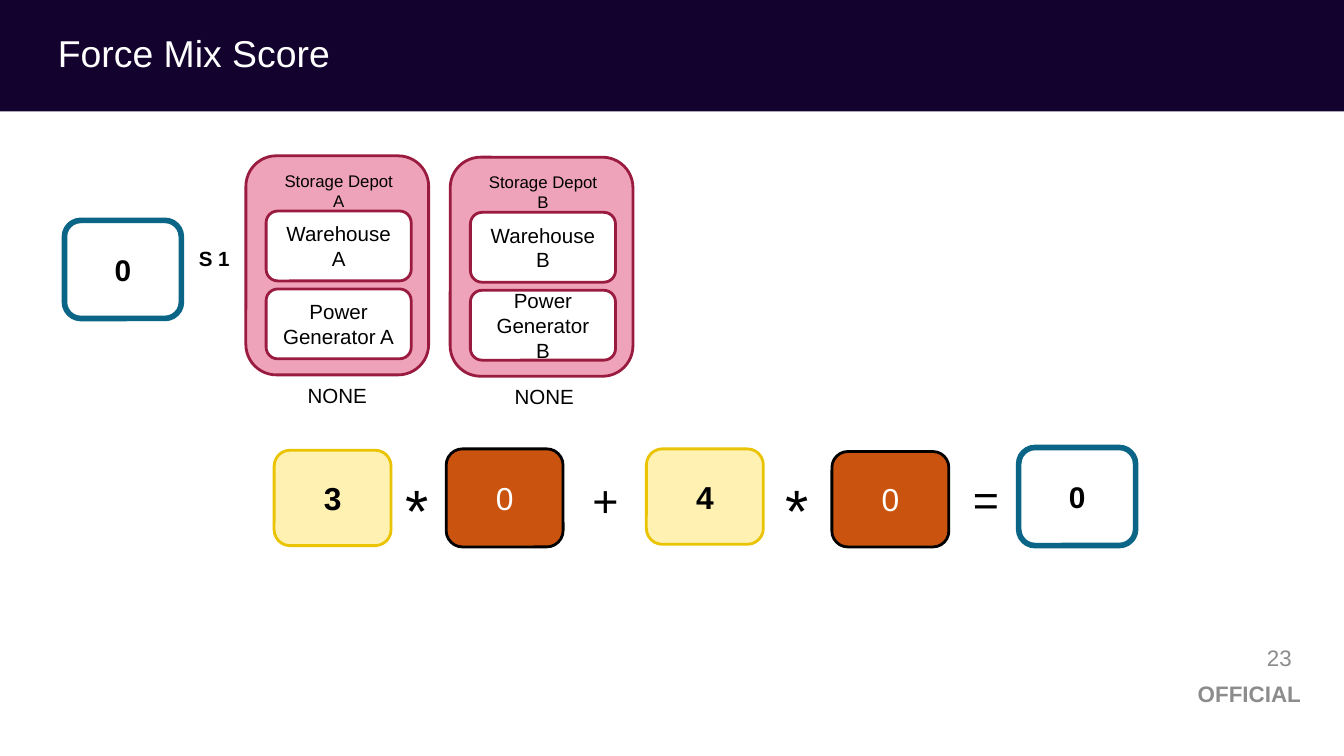
from pptx import Presentation
from pptx.dml.color import RGBColor
from pptx.enum.shapes import MSO_SHAPE
from pptx.enum.text import MSO_ANCHOR, PP_ALIGN
from pptx.util import Inches, Pt

NAVY = RGBColor(0x13, 0x02, 0x2D)
WHITE = RGBColor(0xFF, 0xFF, 0xFF)
BLACK = RGBColor(0, 0, 0)
GREY = RGBColor(0x8C, 0x8C, 0x8C)
PINK = RGBColor(0xEF, 0xA3, 0xBA)
CRIMSON = RGBColor(0x9A, 0x1B, 0x40)
ORANGE = RGBColor(0xCB, 0x53, 0x10)
CREAM = RGBColor(0xFE, 0xF1, 0xB2)
GOLD = RGBColor(0xEA, 0xC3, 0x02)
TEAL = RGBColor(0x0B, 0x65, 0x87)

WIDTH = 10
HEIGHT = WIDTH * 9 / 16
TILE_WIDTH = 0.87
DEPOT_WIDTH, DEPOT_HEIGHT = 1.36, 1.63
UNIT_WIDTH, UNIT_HEIGHT, UNIT_PITCH = 1.08, 0.52, 0.58

# name, left, top, left of the status label, units with their side margins
DEPOTS = [
    ("Storage Depot A", 1.83, 1.16, 1.83,
     [("Warehouse A", 0.1), ("Power Generator A", 0.08)]),
    ("Storage Depot B", 3.35, 1.17, 3.37,
     [("Warehouse B", 0.1), ("Power Generator B", 0.12)]),
]
STATUS = "NONE"

# fill, line, line width, font size, font colour, bold
TILE_STYLES = {
    "weight": (CREAM, GOLD, 1.5, 17, BLACK, True),
    "factor": (ORANGE, BLACK, 1.5, 17, WHITE, False),
    "score": (None, TEAL, 3, 16, BLACK, True),
}
# text, style, left, top, height
TILES = [
    ("0", "score", 0.48, 1.64, 0.73),
    ("3", "weight", 2.04, 3.35, 0.71),
    ("0", "factor", 3.32, 3.34, 0.73),
    ("4", "weight", 4.81, 3.34, 0.71),
    ("0", "factor", 6.19, 3.36, 0.71),
    ("0", "score", 7.58, 3.33, 0.73),
]
# symbol, left, top, font size, height
OPERATORS = [
    ("*", 2.92, 3.47, 32, 0.64),
    ("+", 4.31, 3.47, 24, 0.5),
    ("*", 5.75, 3.47, 32, 0.64),
    ("=", 7.14, 3.46, 24, 0.5),
]

presentation = Presentation()
presentation.slide_width, presentation.slide_height = Inches(WIDTH), Inches(HEIGHT)
slide = presentation.slides.add_slide(presentation.slide_layouts[6])


def write(shape, text, size, color=BLACK, bold=False, align=PP_ALIGN.CENTER,
          anchor=MSO_ANCHOR.MIDDLE, left=0.1, right=0.1):
    """Fill a shape with one paragraph; left and right are margins in inches."""
    frame = shape.text_frame
    frame.word_wrap = True
    frame.vertical_anchor = anchor
    frame.margin_left, frame.margin_right = Inches(left), Inches(right)
    frame.text = text
    paragraph = frame.paragraphs[0]
    paragraph.alignment = align
    font = paragraph.font
    font.name, font.size, font.bold = "Arial", Pt(size), bold
    font.color.rgb = color
    return paragraph


def add_text(box, text, size, **style):
    return write(slide.shapes.add_textbox(*map(Inches, box)), text, size, **style)


def add_box(kind, box, fill, line=None, line_width=1.5):
    shape = slide.shapes.add_shape(kind, *map(Inches, box))
    shape.shadow.inherit = False
    if fill is None:
        shape.fill.background()
    else:
        shape.fill.solid()
        shape.fill.fore_color.rgb = fill
    if line is None:
        shape.line.fill.background()
    else:
        shape.line.color.rgb = line
        shape.line.width = Pt(line_width)
    return shape


def add_depot(name, left, top, status_left, units):
    add_box(MSO_SHAPE.ROUNDED_RECTANGLE, (left, top, DEPOT_WIDTH, DEPOT_HEIGHT),
            PINK, CRIMSON)
    unit_left = left + 0.15
    for row, (unit, margin) in enumerate(units):
        box = (unit_left, top + 0.41 + row * UNIT_PITCH, UNIT_WIDTH, UNIT_HEIGHT)
        shape = add_box(MSO_SHAPE.ROUNDED_RECTANGLE, box, WHITE, CRIMSON)
        write(shape, unit, 11, left=margin, right=margin)
    add_text((unit_left, top + 0.06, UNIT_WIDTH, 0.4), name, 9, anchor=MSO_ANCHOR.TOP)
    add_text((status_left, top + DEPOT_HEIGHT + 0.01, DEPOT_WIDTH, 0.28), STATUS, 11,
             anchor=MSO_ANCHOR.TOP)


add_box(MSO_SHAPE.RECTANGLE, (0, 0, WIDTH, 0.83), NAVY)
title = add_text((0.04, 0.06, 7.48, 0.71), "Force Mix Score", 20, color=WHITE,
                 align=PP_ALIGN.LEFT, left=0.39)
title.line_spacing = 0.9
add_text((1.54, 5.01, 8.18, 0.3), "OFFICIAL", 12, color=GREY, bold=True,
         align=PP_ALIGN.RIGHT, right=0.04)
add_text((7.46, 4.78, 2.25, 0.23), "23", 12, color=GREY, align=PP_ALIGN.RIGHT)

for depot in DEPOTS:
    add_depot(*depot)
add_text((1.33, 1.78, 0.53, 0.28), "S 1", 11, bold=True, anchor=MSO_ANCHOR.TOP)

for text, style, left, top, height in TILES:
    fill, line, line_width, size, color, bold = TILE_STYLES[style]
    tile = add_box(MSO_SHAPE.ROUNDED_RECTANGLE, (left, top, TILE_WIDTH, height),
                   fill, line, line_width)
    write(tile, text, size, color, bold)

for symbol, left, top, size, height in OPERATORS:
    add_text((left, top, 0.33, height), symbol, size,
             align=PP_ALIGN.LEFT, anchor=MSO_ANCHOR.TOP)

presentation.save("out.pptx")
